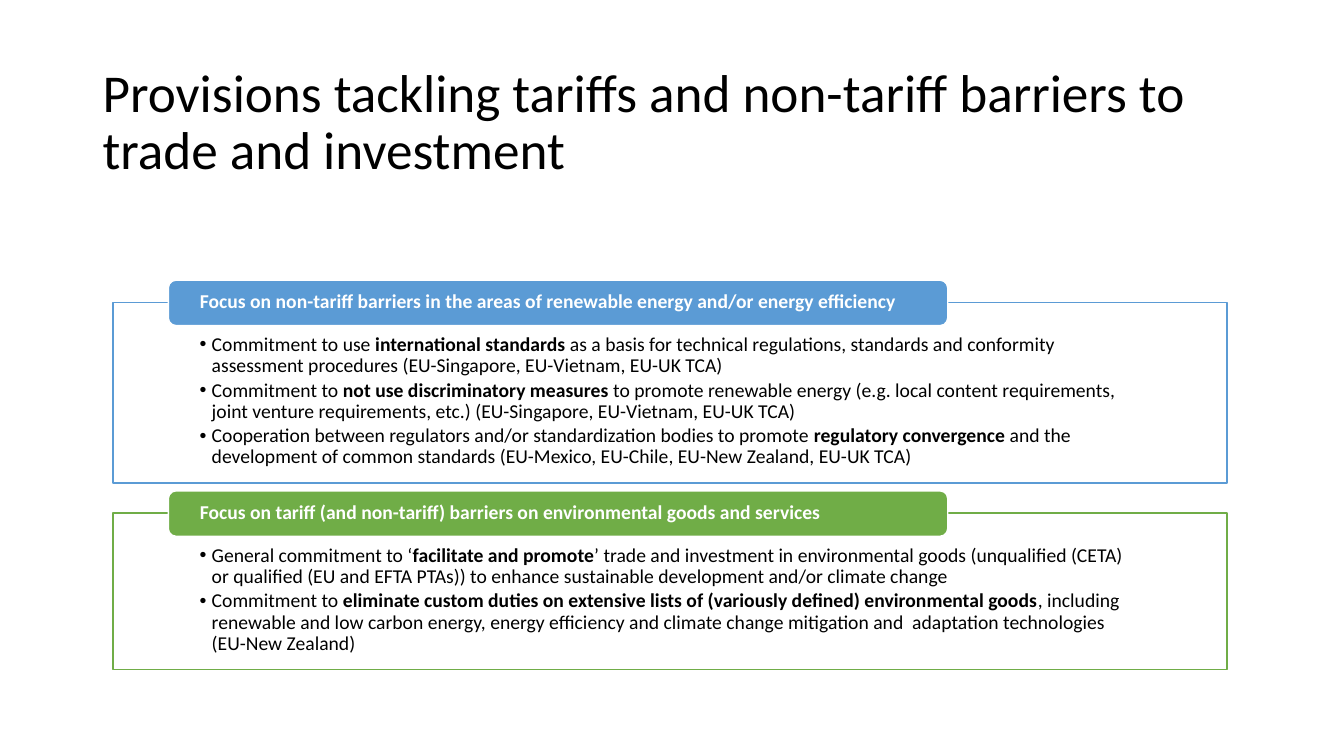
from lxml.etree import SubElement
from pptx import Presentation
from pptx.dml.color import RGBColor
from pptx.enum.shapes import MSO_SHAPE
from pptx.enum.text import MSO_ANCHOR, PP_ALIGN
from pptx.oxml.ns import qn
from pptx.util import Inches, Pt

BLACK = RGBColor(0x00, 0x00, 0x00)
WHITE = RGBColor(0xFF, 0xFF, 0xFF)
BLUE = RGBColor(0x5B, 0x9B, 0xD5)
GREEN = RGBColor(0x70, 0xAD, 0x47)

TITLE_FONT = {"name": "Calibri", "size": Pt(38), "bold": False}
HEADING_FONT = {"name": "Calibri", "size": Pt(14), "bold": True}
BODY_FONT = {"name": "Calibri", "size": Pt(14), "bold": False}
EMPHASIS_FONT = {"name": "Calibri", "size": Pt(14), "bold": True}

TITLE_FRAME = {"word_wrap": True, "vertical_anchor": MSO_ANCHOR.MIDDLE}
HEADING_FRAME = {
    "word_wrap": True, "vertical_anchor": MSO_ANCHOR.MIDDLE,
    "margin_left": Inches(0.29), "margin_right": Inches(0.29),
    "margin_top": 0, "margin_bottom": Inches(0.01),
}
BODY_FRAME = {
    "word_wrap": True, "vertical_anchor": MSO_ANCHOR.TOP,
    "margin_left": Inches(0.86), "margin_right": Inches(0.86),
    "margin_top": Inches(0.32), "margin_bottom": Inches(0.11),
}
PLAIN_PARAGRAPH = {"alignment": PP_ALIGN.LEFT, "line_spacing": 0.9}
BULLET_PARAGRAPH = {**PLAIN_PARAGRAPH, "level": 1, "space_after": Pt(2.3)}

# Each commitment is split into lead, emphasised words and remainder.
SECTIONS = [
    (3.0, 1.79, BLUE,
     "Focus on non-tariff barriers in the areas of renewable energy and/or energy efficiency",
     [("Commitment to use ", "international standards ",
       "as a basis for technical regulations, standards and conformity assessment "
       "procedures (EU-Singapore, EU-Vietnam, EU-UK TCA)"),
      ("Commitment to ", "not use discriminatory measures ",
       "to promote renewable energy (e.g. local content requirements, joint venture "
       "requirements, etc.) (EU-Singapore, EU-Vietnam, EU-UK TCA)"),
      ("Cooperation between regulators and/or standardization bodies to promote ",
       "regulatory convergence ",
       "and the development of common standards "
       "(EU-Mexico, EU-Chile, EU-New Zealand, EU-UK TCA)")]),
    (5.09, 1.55, GREEN,
     "Focus on tariff (and non-tariff) barriers on environmental goods and services",
     [("General commitment to ‘", "facilitate and promote",
       "’ trade and investment in environmental goods (unqualified (CETA) or qualified "
       "(EU and EFTA PTAs)) to enhance sustainable development and/or climate change"),
      ("Commitment to ",
       "eliminate custom duties on extensive lists of (variously defined) environmental goods",
       ", including renewable and low carbon energy, energy efficiency and climate change "
       "mitigation and  adaptation technologies (EU-New Zealand)")]),
]


def write_paragraph(paragraph, layout, color, parts):
    """Fill a paragraph from (text, font values) parts."""
    for key, value in layout.items():
        setattr(paragraph, key, value)
    for text, font_values in parts:
        run = paragraph.add_run()
        run.text = text
        run.font.color.rgb = color
        for key, value in font_values.items():
            setattr(run.font, key, value)


def add_panel(shape_type, box, fill, line, frame_values):
    """Draw a filled, outlined shape and return its text frame."""
    panel = slide.shapes.add_shape(shape_type, *map(Inches, box))
    panel.shadow.inherit = False
    panel.fill.solid()
    panel.fill.fore_color.rgb = fill
    panel.line.color.rgb = line
    panel.line.width = Pt(1)
    for key, value in frame_values.items():
        setattr(panel.text_frame, key, value)
    return panel.text_frame


prs = Presentation()
prs.slide_width, prs.slide_height = Inches(13.33), Inches(7.5)
slide = prs.slides.add_slide(prs.slide_layouts[6])

title = slide.shapes.add_textbox(Inches(0.92), Inches(0.61), Inches(11.5), Inches(1.24)).text_frame
for key, value in TITLE_FRAME.items():
    setattr(title, key, value)
write_paragraph(title.paragraphs[0], PLAIN_PARAGRAPH, BLACK, [
    ("Provisions tackling tariffs and non-tariff barriers to trade and investment", TITLE_FONT)])

for top, height, accent, heading_text, commitments in SECTIONS:
    body = add_panel(MSO_SHAPE.RECTANGLE, (1.12, top, 11.05, height), WHITE, accent, BODY_FRAME)
    for index, commitment in enumerate(commitments):
        paragraph = body.add_paragraph() if index else body.paragraphs[0]
        write_paragraph(paragraph, BULLET_PARAGRAPH, BLACK,
                        zip(commitment, (BODY_FONT, EMPHASIS_FONT, BODY_FONT)))
        properties = paragraph._p.get_or_add_pPr()
        properties.set("marL", str(Inches(0.12)))
        properties.set("indent", str(-Inches(0.12)))
        SubElement(properties, qn("a:buFont")).set("typeface", "Arial")
        SubElement(properties, qn("a:buChar")).set("char", "•")

    # The heading tab straddles the top edge of its panel.
    heading = add_panel(MSO_SHAPE.ROUNDED_RECTANGLE, (1.67, top - 0.22, 7.73, 0.45),
                        accent, WHITE, HEADING_FRAME)
    write_paragraph(heading.paragraphs[0], PLAIN_PARAGRAPH, WHITE, [(heading_text, HEADING_FONT)])

prs.save("out.pptx")
